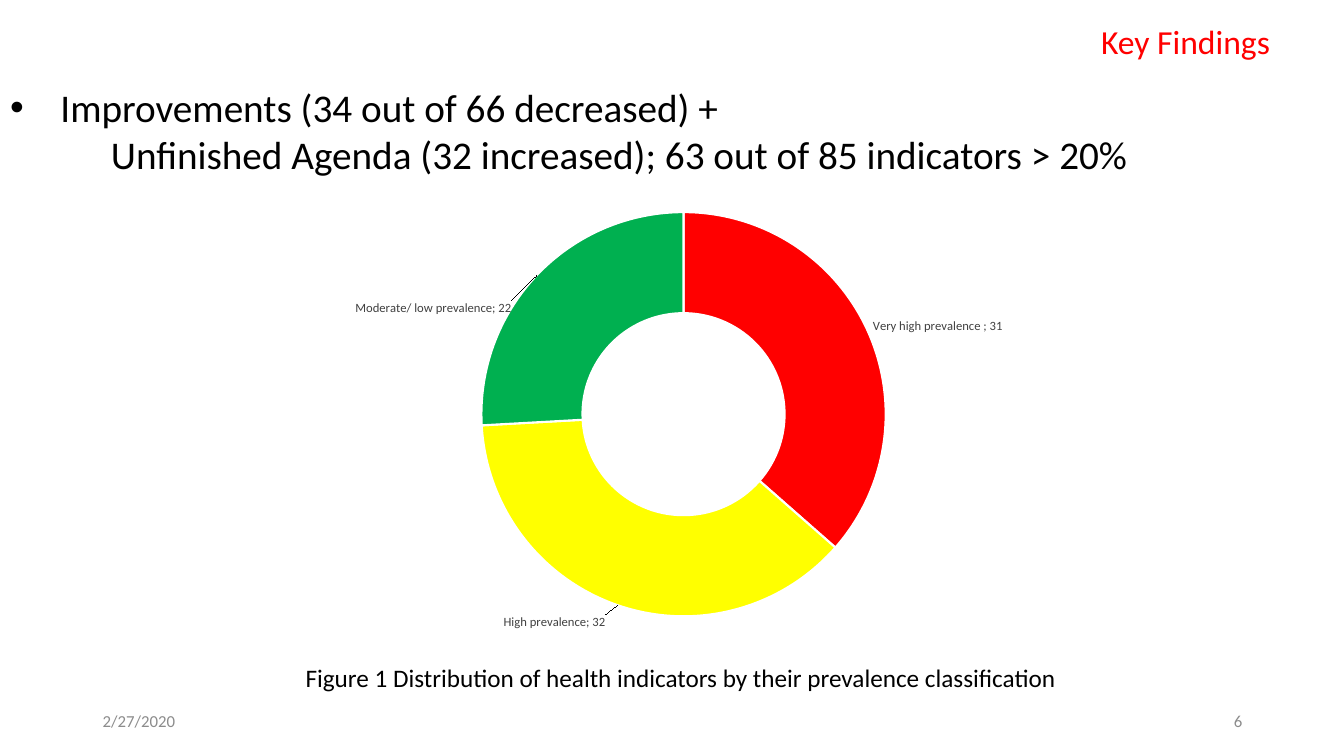
"""Build the Key Findings slide with a doughnut of health indicator prevalence."""
from copy import deepcopy
from dataclasses import dataclass

from pptx import Presentation
from pptx.chart.chart import Chart
from pptx.chart.data import CategoryChartData
from pptx.dml.color import RGBColor
from pptx.enum.chart import XL_CHART_TYPE
from pptx.enum.text import MSO_ANCHOR, MSO_AUTO_SIZE, PP_ALIGN
from pptx.oxml import parse_xml
from pptx.oxml.ns import qn
from pptx.slide import Slide
from pptx.text.text import Font, TextFrame
from pptx.util import Inches, Length, Pt

CHART_NAMESPACE = "http://schemas.openxmlformats.org/drawingml/2006/chart"


@dataclass(frozen=True)
class Theme:
    font: str = "Calibri"
    black: str = "000000"
    white: str = "FFFFFF"
    red: str = "FF0000"
    yellow: str = "FFFF00"
    green: str = "00B050"
    footer_gray: str = "8C8C8C"
    label_gray: str = "404040"
    body_size: int = 28
    title_size: int = 24
    caption_size: int = 18
    footer_size: int = 12
    chart_size: int = 10
    label_size: int = 9


THEME = Theme()


@dataclass(frozen=True)
class Box:
    left: float
    top: float
    width: float
    height: float

    def lengths(self) -> tuple[Length, Length, Length, Length]:
        return Inches(self.left), Inches(self.top), Inches(self.width), Inches(self.height)


@dataclass(frozen=True)
class Note:
    text: str
    box: Box
    size: int
    color: str
    align: PP_ALIGN = PP_ALIGN.LEFT
    anchor: MSO_ANCHOR = MSO_ANCHOR.TOP
    line_spacing: float = 1.0


@dataclass(frozen=True)
class Finding:
    text: str
    margin: float
    indent: float
    bullet: str = ""


@dataclass(frozen=True)
class Slice:
    category: str
    value: int
    color: str
    label_shift: tuple[float, float]


TITLE_BOX = Box(10.82, 0.16, 2.43, 0.5)
BODY_BOX = Box(0, 0.78, 13.33, 3.87)
CHART_BOX = Box(3.06, 1.96, 7.44, 4.3)
RING_DIAMETER = 4.01

FINDINGS = (
    Finding("Improvements (34 out of 66 decreased) +", 0.5, -0.5, "•"),
    Finding("Unfinished Agenda (32 increased); 63 out of 85 indicators > 20%", 1, 0),
)
SLICES = (
    Slice("Very high prevalence ", 31, THEME.red, (1.15, -0.25)),
    Slice("High prevalence", 32, THEME.yellow, (-0.79, 0.64)),
    Slice("Moderate/ low prevalence", 22, THEME.green, (-1.39, -0.02)),
)
NOTES = (
    Note("Figure 1 Distribution of health indicators by their prevalence classification ",
         Box(2.74, 6.5, 8.08, 0.43), THEME.caption_size, THEME.black,
         PP_ALIGN.CENTER, line_spacing=1.07),
    Note("2/27/2020", Box(0.92, 6.95, 3, 0.4), THEME.footer_size, THEME.footer_gray,
         anchor=MSO_ANCHOR.MIDDLE),
    Note("6", Box(9.42, 6.95, 3, 0.4), THEME.footer_size, THEME.footer_gray,
         PP_ALIGN.RIGHT, MSO_ANCHOR.MIDDLE),
)


def style_font(font: Font, size: int, color: str) -> None:
    font.name = THEME.font
    font.size = Pt(size)
    font.color.rgb = RGBColor.from_string(color)


def write_note(frame: TextFrame, note: Note) -> None:
    frame.word_wrap = True
    frame.auto_size = MSO_AUTO_SIZE.NONE
    frame.vertical_anchor = note.anchor
    para = frame.paragraphs[0]
    para.alignment = note.align
    para.line_spacing = note.line_spacing
    span = para.add_run()
    span.text = note.text
    style_font(span.font, note.size, note.color)


def add_title(page: Slide) -> None:
    title = page.shapes.title
    title.left, title.top, title.width, title.height = TITLE_BOX.lengths()
    write_note(title.text_frame, Note("Key Findings", TITLE_BOX, THEME.title_size, THEME.red))


def add_findings(page: Slide) -> None:
    body = page.placeholders[1]
    body.left, body.top, body.width, body.height = BODY_BOX.lengths()
    frame = body.text_frame
    frame.word_wrap = True
    frame.auto_size = MSO_AUTO_SIZE.NONE
    for index, finding in enumerate(FINDINGS):
        para = frame.add_paragraph() if index else frame.paragraphs[0]
        para.space_before = Pt(0)
        para.line_spacing = 1.0
        properties = para._p.get_or_add_pPr()
        properties.set("marL", str(Inches(finding.margin)))
        properties.set("indent", str(Inches(finding.indent)))
        if finding.bullet:
            mark = properties.makeelement(qn("a:buChar"), {"char": finding.bullet})
        else:
            mark = properties.makeelement(qn("a:buNone"), {})
        properties.append(mark)
        span = para.add_run()
        span.text = finding.text
        style_font(span.font, THEME.body_size, THEME.black)


def place_ring(chart: Chart) -> None:
    width = RING_DIAMETER / CHART_BOX.width
    height = RING_DIAMETER / CHART_BOX.height
    area = chart._chartSpace.chart.plotArea
    for layout in area.findall(qn("c:layout")):
        area.remove(layout)
    area.insert(0, parse_xml(
        f'<c:layout xmlns:c="{CHART_NAMESPACE}"><c:manualLayout>'
        '<c:layoutTarget val="inner"/><c:xMode val="edge"/><c:yMode val="edge"/>'
        f'<c:x val="{(1 - width) / 2:.4f}"/><c:y val="{(1 - height) / 2:.4f}"/>'
        f'<c:w val="{width:.4f}"/><c:h val="{height:.4f}"/>'
        '</c:manualLayout></c:layout>'))


def label_slices(chart: Chart) -> None:
    labels = chart.plots[0].series[0].data_labels
    labels.show_value = True
    labels.show_category_name = True
    style_font(labels.font, THEME.label_size, THEME.label_gray)
    root = labels._element
    separator = parse_xml(f'<c:separator xmlns:c="{CHART_NAMESPACE}">; </c:separator>')
    root.find(qn("c:showBubbleSize")).addnext(separator)
    for leader in root.findall(qn("c:showLeaderLines")):
        root.remove(leader)
    separator.addnext(root.makeelement(qn("c:showLeaderLines"), {"val": "1"}))
    for index, part in enumerate(SLICES):
        across, down = part.label_shift
        label = parse_xml(
            f'<c:dLbl xmlns:c="{CHART_NAMESPACE}"><c:idx val="{index}"/>'
            f'<c:layout><c:manualLayout><c:x val="{across / CHART_BOX.width:.4f}"/>'
            f'<c:y val="{down / CHART_BOX.height:.4f}"/></c:manualLayout></c:layout>'
            '<c:showLegendKey val="0"/><c:showVal val="1"/><c:showCatName val="1"/>'
            '<c:showSerName val="0"/><c:showPercent val="0"/><c:showBubbleSize val="0"/>'
            '<c:separator>; </c:separator></c:dLbl>')
        label.insert(2, deepcopy(root.find(qn("c:txPr"))))
        root.insert(index, label)


def add_prevalence_chart(page: Slide) -> None:
    data = CategoryChartData()
    data.categories = [part.category for part in SLICES]
    data.add_series("Series 1", [part.value for part in SLICES])
    chart = page.shapes.add_chart(XL_CHART_TYPE.DOUGHNUT, *CHART_BOX.lengths(), data).chart
    chart.has_title = False
    chart.has_legend = False
    style_font(chart.font, THEME.chart_size, THEME.black)
    chart.plots[0].vary_by_categories = True
    for index, part in enumerate(SLICES):
        look = chart.plots[0].series[0].points[index].format
        look.fill.solid()
        look.fill.fore_color.rgb = RGBColor.from_string(part.color)
        look.line.color.rgb = RGBColor.from_string(THEME.white)
        look.line.width = Pt(1.5)
    place_ring(chart)
    label_slices(chart)


def main() -> None:
    deck = Presentation()
    deck.slide_width, deck.slide_height = Inches(13.33), Inches(7.5)
    page = deck.slides.add_slide(deck.slide_layouts[1])
    add_findings(page)
    add_title(page)
    add_prevalence_chart(page)
    for note in NOTES:
        write_note(page.shapes.add_textbox(*note.box.lengths()).text_frame, note)
    deck.save("out.pptx")


if __name__ == "__main__":
    main()
